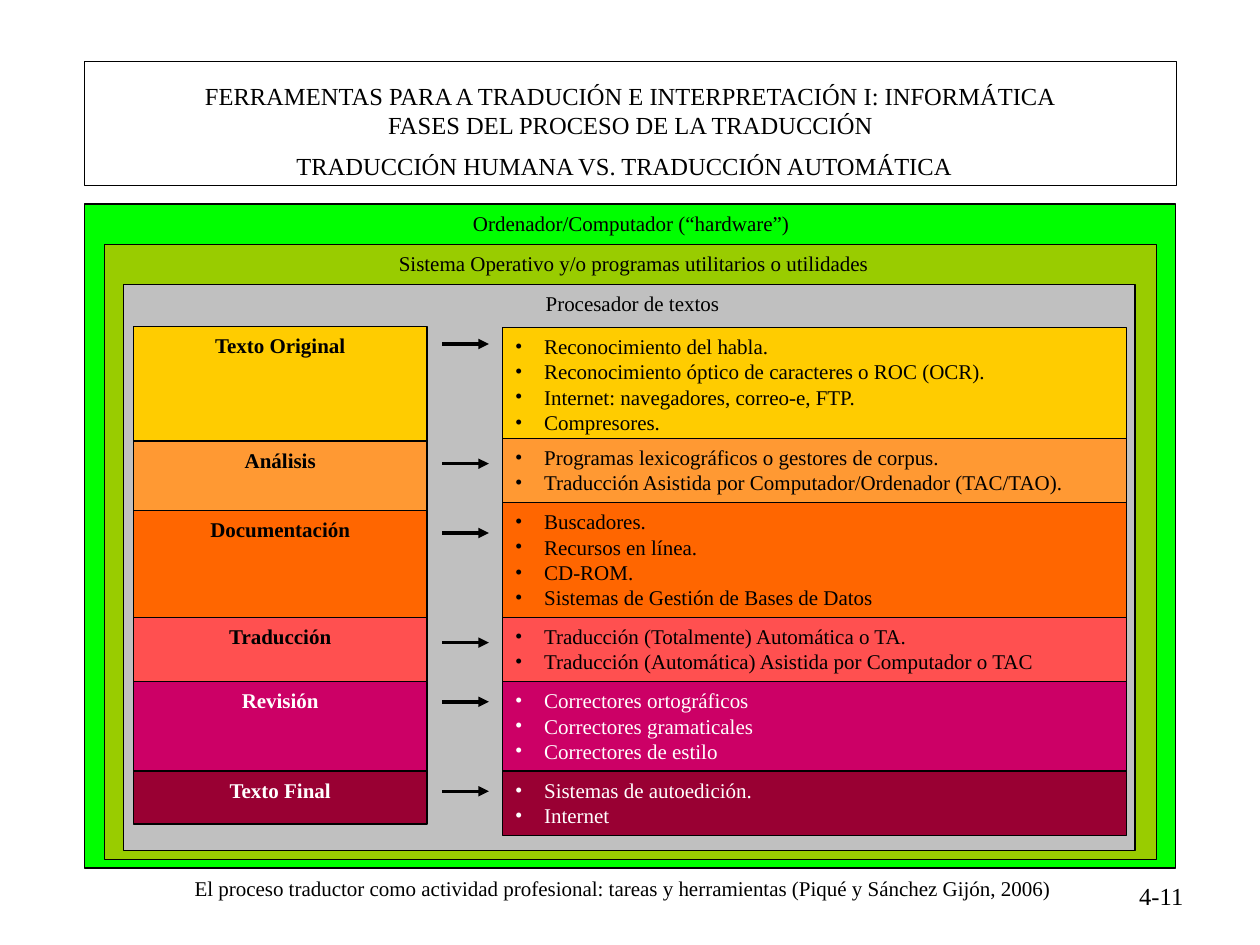
"""Build a slide on the phases of the translation process and their tools."""
from lxml import etree
from pptx import Presentation
from pptx.dml.color import RGBColor
from pptx.enum.shapes import MSO_CONNECTOR, MSO_SHAPE
from pptx.enum.text import MSO_ANCHOR, PP_ALIGN
from pptx.oxml.ns import qn
from pptx.util import Inches, Pt

BLACK = RGBColor(0x00, 0x00, 0x00)
WHITE = RGBColor(0xFF, 0xFF, 0xFF)
GREEN = RGBColor(0x00, 0xFF, 0x00)
OLIVE = RGBColor(0x99, 0xCC, 0x00)
GREY = RGBColor(0xC0, 0xC0, 0xC0)
YELLOW = RGBColor(0xFF, 0xCC, 0x00)
ORANGE = RGBColor(0xFF, 0x99, 0x33)
DEEP_ORANGE = RGBColor(0xFF, 0x66, 0x00)
CORAL = RGBColor(0xFF, 0x50, 0x50)
MAGENTA = RGBColor(0xCC, 0x00, 0x66)
WINE = RGBColor(0x99, 0x00, 0x33)

deck = Presentation()
deck.slide_width = Inches(10)
deck.slide_height = Inches(7.5)
page = deck.slides.add_slide(deck.slide_layouts[6])


def add_box(left, top, width, height, fill=None):
    box = page.shapes.add_shape(
        MSO_SHAPE.RECTANGLE, Inches(left), Inches(top), Inches(width), Inches(height)
    )
    box.shadow.inherit = False
    if fill is None:
        box.fill.background()
    else:
        box.fill.solid()
        box.fill.fore_color.rgb = fill
    box.line.color.rgb = BLACK
    box.line.width = Pt(0.75)
    return box


def write(box, lines, size=12, color=BLACK, align=PP_ALIGN.CENTER, bold=False, bullets=False):
    frame = box.text_frame
    frame.word_wrap = True
    frame.vertical_anchor = MSO_ANCHOR.TOP
    for index, line in enumerate(lines):
        para = frame.add_paragraph() if index else frame.paragraphs[0]
        para.alignment = align
        if bullets:
            para.line_spacing = Pt(14.4)
            properties = para._p.get_or_add_pPr()
            properties.set("marL", str(Inches(0.23)))
            properties.set("indent", str(-Inches(0.23)))
            etree.SubElement(properties, qn("a:buFont")).set("typeface", "Times New Roman")
            etree.SubElement(properties, qn("a:buChar")).set("char", "•")
        span = para.add_run()
        span.text = line
        span.font.name = "Times New Roman"
        span.font.size = Pt(size)
        span.font.bold = bold
        span.font.color.rgb = color


title = add_box(0.67, 0.49, 8.67, 0.98)
write(
    title,
    [
        "FERRAMENTAS PARA A TRADUCIÓN E INTERPRETACIÓN I: INFORMÁTICA",
        "FASES DEL PROCESO DE LA TRADUCCIÓN",
    ],
    size=14,
)
title.text_frame.margin_top = Inches(0.15)

layers = [
    (0.67, 1.62, 8.66, 5.27, GREEN),
    (0.83, 1.94, 8.35, 4.88, OLIVE),
    (0.98, 2.26, 8.03, 4.49, GREY),
]
for layer in layers:
    add_box(*layer)

labels = [
    (0.7, 1.62, 8.62, 0.3, 12, PP_ALIGN.CENTER, "Ordenador/Computador (“hardware”)"),
    (0.89, 1.94, 8.28, 0.3, 12, PP_ALIGN.CENTER,
     "Sistema Operativo y/o programas utilitarios o utilidades"),
    (1.03, 2.26, 7.98, 0.3, 12, PP_ALIGN.CENTER, "Procesador de textos"),
    (0.98, 1.15, 7.95, 0.34, 14, PP_ALIGN.CENTER,
     "TRADUCCIÓN HUMANA VS. TRADUCCIÓN AUTOMÁTICA"),
    (1.19, 6.9, 7.51, 0.3, 12, PP_ALIGN.CENTER,
     "El proceso traductor como actividad profesional: tareas y herramientas "
     "(Piqué y Sánchez Gijón, 2006)"),
    (6.42, 6.94, 3.07, 0.28, 14, PP_ALIGN.RIGHT, "4-11"),
]
for left, top, width, height, size, align, text in labels:
    label = page.shapes.add_textbox(Inches(left), Inches(top), Inches(width), Inches(height))
    write(label, [text], size=size, align=align)

phases = [
    ("Texto Original", YELLOW, BLACK, 2.59, 0.93, 2.6, 0.91, 2.73, [
        "Reconocimiento del habla.",
        "Reconocimiento óptico de caracteres o ROC (OCR).",
        "Internet: navegadores, correo-e, FTP.",
        "Compresores.",
    ]),
    ("Análisis", ORANGE, BLACK, 3.5, 0.55, 3.48, 0.51, 3.68, [
        "Programas lexicográficos o gestores de corpus.",
        "Traducción Asistida por Computador/Ordenador (TAC/TAO).",
    ]),
    ("Documentación", DEEP_ORANGE, BLACK, 4.05, 0.9, 3.99, 0.91, 4.23, [
        "Buscadores.",
        "Recursos en línea.",
        "CD-ROM.",
        "Sistemas de Gestión de Bases de Datos",
    ]),
    ("Traducción", CORAL, BLACK, 4.9, 0.51, 4.9, 0.51, 5.1, [
        "Traducción (Totalmente) Automática o TA.",
        "Traducción (Automática) Asistida por Computador o TAC",
    ]),
    ("Revisión", MAGENTA, WHITE, 5.41, 0.71, 5.41, 0.71, 5.57, [
        "Correctores ortográficos",
        "Correctores gramaticales",
        "Correctores de estilo",
    ]),
    ("Texto Final", WINE, WHITE, 6.12, 0.42, 6.12, 0.51, 6.28, [
        "Sistemas de autoedición.",
        "Internet",
    ]),
]
for name, fill, ink, phase_top, phase_height, tools_top, tools_height, arrow_y, tools in phases:
    phase_box = add_box(1.06, phase_top, 2.33, phase_height, fill)
    write(phase_box, [name], color=ink, bold=True)

    tools_box = add_box(3.99, tools_top, 4.95, tools_height, fill)
    write(tools_box, tools, color=ink, align=PP_ALIGN.LEFT, bullets=True)

    arrow = page.shapes.add_connector(
        MSO_CONNECTOR.STRAIGHT, Inches(3.51), Inches(arrow_y), Inches(3.88), Inches(arrow_y)
    )
    arrow.line.color.rgb = BLACK
    arrow.line.width = Pt(2)
    etree.SubElement(arrow.line._get_or_add_ln(), qn("a:tailEnd")).set("type", "triangle")
    etree.SubElement(arrow._element.spPr, qn("a:effectLst"))

deck.save("out.pptx")
